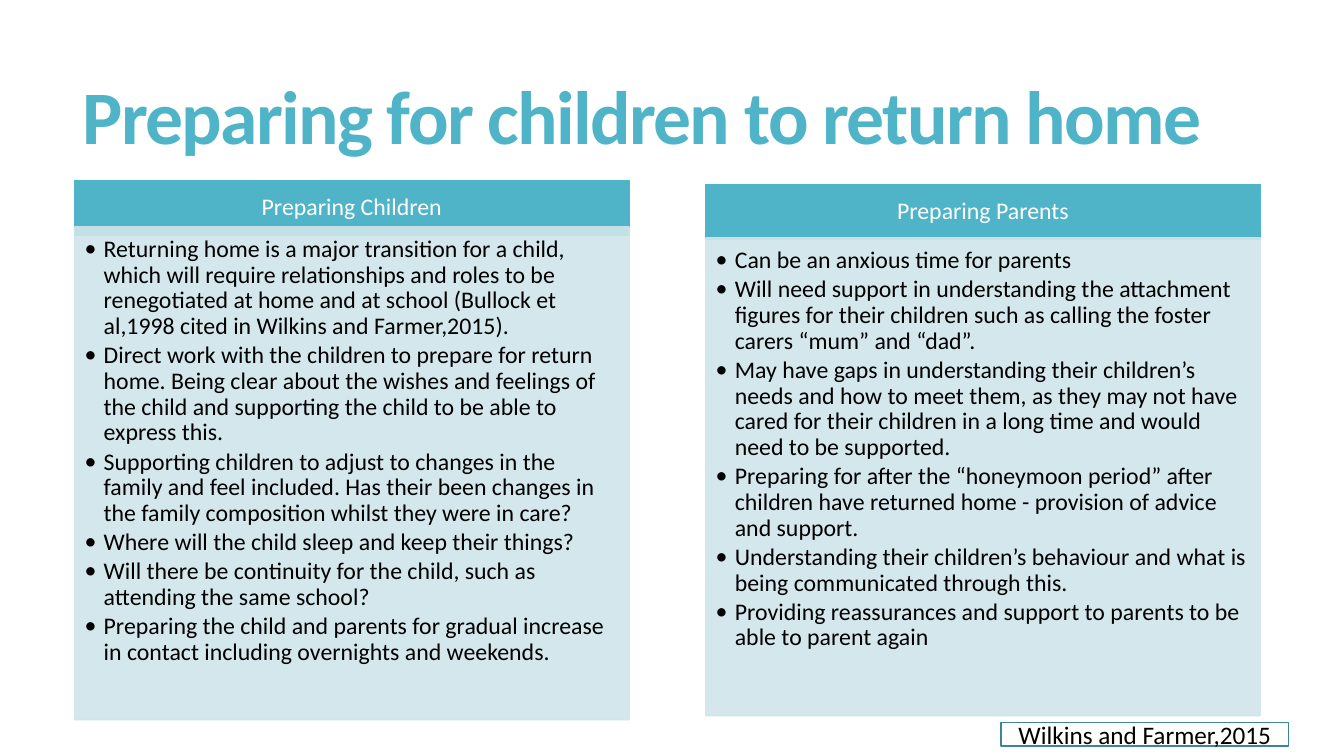
from lxml.etree import SubElement
from pptx import Presentation
from pptx.dml.color import RGBColor
from pptx.enum.shapes import MSO_SHAPE as Preset
from pptx.enum.text import MSO_ANCHOR as Anchor, PP_ALIGN as Align
from pptx.oxml import parse_xml
from pptx.oxml.ns import nsdecls, qn
from pptx.util import Inches, Pt

TEAL = RGBColor(0x50, 0xB4, 0xC8)
PALE = RGBColor(0xD0, 0xE5, 0xEB)
DARK_TEAL = RGBColor(0x3B, 0x85, 0x94)
WHITE = RGBColor(0xFF, 0xFF, 0xFF)
BLACK = RGBColor(0, 0, 0)

COLUMN_LEFT, COLUMN_STEP, COLUMN_WIDTH = 0.74, 6.26, 5.5
HEADING_HEIGHT = 0.54

deck = Presentation()
deck.slide_width, deck.slide_height = Inches(13.33), Inches(7.5)
slide = deck.slides.add_slide(deck.slide_layouts[6])


def add_box(left, top, width, height, fill, line, insets, anchor):
    box = slide.shapes.add_shape(
        Preset.RECTANGLE, Inches(left), Inches(top), Inches(width), Inches(height))
    box.shadow.inherit = False
    if fill is None:
        box.fill.background()
    else:
        box.fill.solid()
        box.fill.fore_color.rgb = fill
    if line is None:
        box.line.fill.background()
    else:
        box.line.color.rgb = line
        box.line.width = Pt(1)
    frame = box.text_frame
    frame.word_wrap = True
    frame.vertical_anchor = anchor
    (frame.margin_left, frame.margin_top,
     frame.margin_right, frame.margin_bottom) = map(Inches, insets)
    return box


def add_text(paragraph, words, size, color, align, spacing=1.0):
    paragraph.alignment = align
    paragraph.line_spacing = spacing
    run = paragraph.add_run()
    run.text = words
    run.font.name = "Calibri"
    run.font.size = Pt(size)
    run.font.color.rgb = color
    return run


NORMAL_INSETS = (0.1, 0.05, 0.1, 0.05)
title = add_box(0.72, 0.55, 11.78, 1.31, None, None, NORMAL_INSETS, Anchor.MIDDLE)
title_run = add_text(title.text_frame.paragraphs[0], "Preparing for children to return home",
                     54, TEAL, Align.LEFT, 0.85)
title_run.font.bold = True
title_format = title_run.font._element
title_format.set("spc", "-120")
title_format.find(qn("a:solidFill")).addnext(parse_xml(
    f'<a:effectLst {nsdecls("a")}>'
    '<a:outerShdw blurRad="50800" dist="38100" dir="2700000" algn="tl" rotWithShape="0">'
    '<a:srgbClr val="000000"><a:alpha val="40000"/></a:srgbClr>'
    '</a:outerShdw></a:effectLst>'))

columns = [
    ("Preparing Children", 1.79, 2.25, 4.89, [
        "Returning home is a major transition for a child, which will require relationships and roles "
        "to be renegotiated at home and at school (Bullock et al,1998 cited in Wilkins and Farmer,2015).",
        "Direct work with the children to prepare for return home. Being clear about the wishes and "
        "feelings of the child and supporting the child to be able to express this.",
        "Supporting children to adjust to changes in the family and feel included. Has their been "
        "changes in the family composition whilst they were in care?",
        "Where will the child sleep and keep their things?",
        "Will there be continuity for the child, such as attending the same school?",
        "Preparing the child and parents for gradual increase in contact including overnights and weekends.",
    ]),
    ("Preparing Parents", 1.83, 2.36, 4.74, [
        "Can be an anxious time for parents",
        "Will need support in understanding the attachment figures for their children such as calling "
        "the foster carers “mum” and “dad”.",
        "May have gaps in understanding their children’s needs and how to meet them, as they may not "
        "have cared for their children in a long time and would need to be supported.",
        "Preparing for after the “honeymoon period” after children have returned home - provision of "
        "advice and support.",
        "Understanding their children’s behaviour and what is being communicated through this.",
        "Providing reassurances and support to parents to be able to parent again",
    ]),
]

for index, (heading, heading_top, advice_top, advice_height, points) in enumerate(columns):
    left = COLUMN_LEFT + index * COLUMN_STEP
    banner = add_box(left, heading_top, COLUMN_WIDTH, HEADING_HEIGHT, TEAL, TEAL,
                     (0.13, 0.08, 0.13, 0.08), Anchor.MIDDLE)
    add_text(banner.text_frame.paragraphs[0], heading, 17, WHITE, Align.CENTER, 0.9)

    advice = add_box(left, advice_top, COLUMN_WIDTH, advice_height, PALE, PALE,
                     (0.1, 0.1, 0.13, 0.15), Anchor.TOP)
    for tint in advice._element.spPr.iter(qn("a:srgbClr")):
        SubElement(tint, qn("a:alpha"), val="90000")
    for number, point in enumerate(points):
        frame = advice.text_frame
        paragraph = frame.add_paragraph() if number else frame.paragraphs[0]
        add_text(paragraph, point, 17, BLACK, Align.LEFT, 0.9)
        paragraph.space_after = Pt(2.5)
        layout = paragraph._p.get_or_add_pPr()
        layout.set("marL", str(Inches(0.19)))
        layout.set("indent", str(-Inches(0.19)))
        SubElement(layout, qn("a:buFont"), typeface="Calibri")
        SubElement(layout, qn("a:buChar"), char="•")

citation = add_box(9.93, 7.17, 2.85, 0.23, None, DARK_TEAL, NORMAL_INSETS, Anchor.MIDDLE)
add_text(citation.text_frame.paragraphs[0], "Wilkins and Farmer,2015", 18, BLACK, Align.CENTER)

deck.save("out.pptx")
